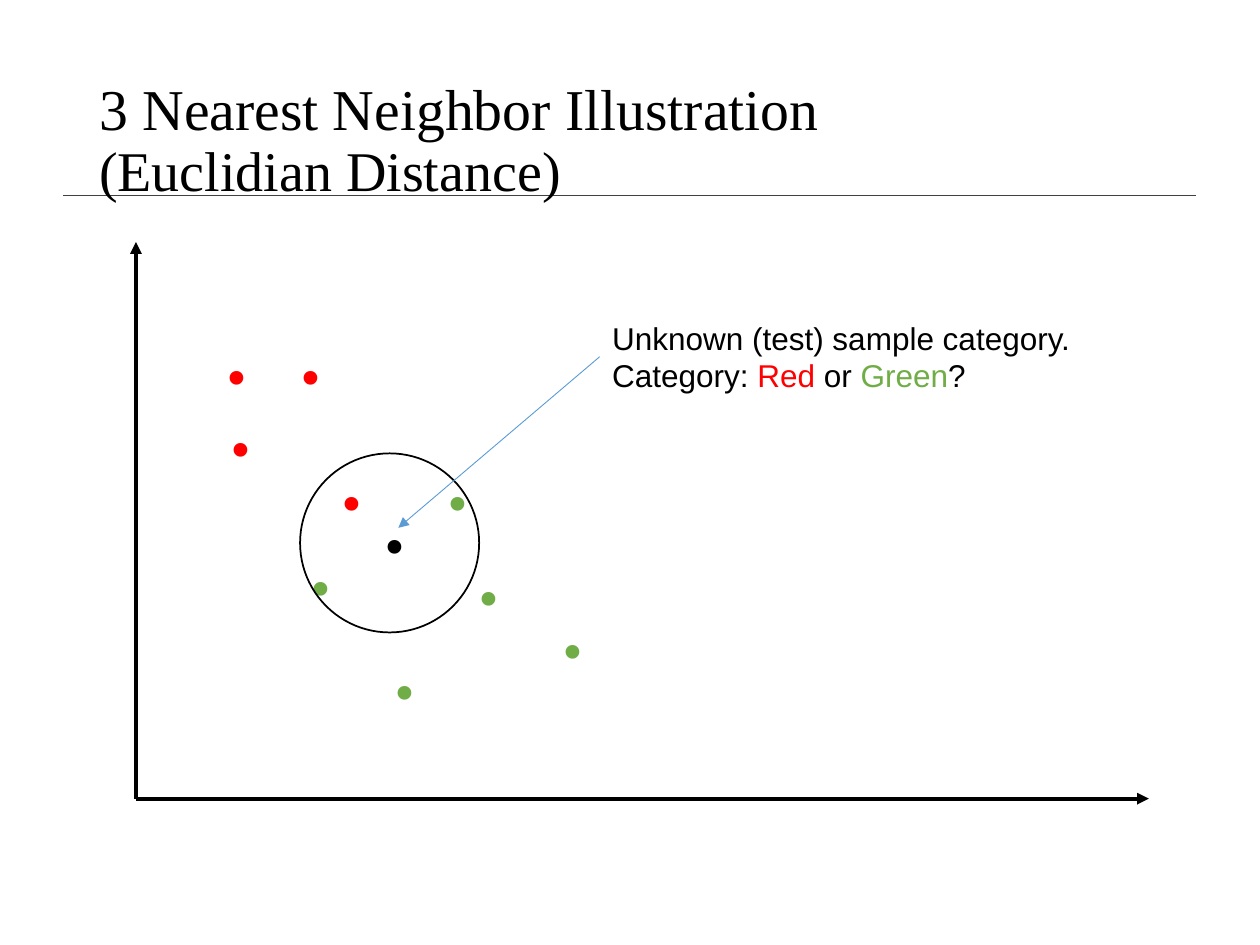
"""Build a slide that illustrates 3-nearest-neighbor classification."""
from typing import Any, NamedTuple

from lxml.etree import SubElement
from pptx import Presentation
from pptx.dml.color import RGBColor
from pptx.enum.shapes import MSO_CONNECTOR, MSO_SHAPE
from pptx.enum.text import MSO_ANCHOR, MSO_AUTO_SIZE
from pptx.oxml.ns import qn
from pptx.util import Cm, Pt

BLACK = RGBColor(0x00, 0x00, 0x00)
GRAY = RGBColor(0x40, 0x40, 0x40)
RED = RGBColor(0xFF, 0x00, 0x00)
GREEN = RGBColor(0x70, 0xAD, 0x47)
BLUE = RGBColor(0x5B, 0x9B, 0xD5)

SERIF, SANS = "Times New Roman", "Arial"
DOT_SIZE = (1.09, 3.05)
ORIGIN_X, ORIGIN_Y = 2.74, 16.1


class Line(NamedTuple):
    start: tuple[float, float]
    end: tuple[float, float]
    color: RGBColor
    width: float
    arrow: bool = True


class Dot(NamedTuple):
    left: float
    top: float
    color: RGBColor


class Span(NamedTuple):
    text: str
    size: float
    font: str = SANS
    color: RGBColor = BLACK


RULE = Line((1.27, 3.94), (24.1, 3.94), GRAY, 1, arrow=False)
AXES = [
    Line((ORIGIN_X, ORIGIN_Y), (ORIGIN_X, 4.88), BLACK, 2.25),
    Line((ORIGIN_X, ORIGIN_Y), (23.16, ORIGIN_Y), BLACK, 2.25),
]
POINTER = Line((12.09, 7.19), (8.03, 10.64), BLUE, 0.5)
DOTS = [
    Dot(4.32, 6.73, RED),
    Dot(4.24, 5.28, RED),
    Dot(6.55, 7.82, RED),
    Dot(5.72, 5.28, RED),
    Dot(5.92, 9.53, GREEN),
    Dot(9.32, 9.73, GREEN),
    Dot(7.62, 11.63, GREEN),
    Dot(11, 10.8, GREEN),
    Dot(8.69, 7.82, GREEN),
    Dot(7.42, 8.69, BLACK),
]
TITLE = [
    Span("3 Nearest Neighbor Illustration", 33, SERIF),
    Span("(Euclidian Distance)", 32, SERIF),
]
QUESTION = [
    [Span("Unknown (test) sample category.", 18)],
    [
        Span("Category: ", 18),
        Span("Red", 18, color=RED),
        Span(" or ", 18),
        Span("Green", 18, color=GREEN),
        Span("?", 18),
    ],
]


def set_attributes(target: Any, values: dict[str, Any]) -> None:
    """Set each named attribute of the target."""
    for name, value in values.items():
        setattr(target, name, value)


def add_line(shapes: Any, line: Line) -> None:
    """Draw a straight line, with an arrowhead at its end if asked."""
    points = [Cm(v) for v in (*line.start, *line.end)]
    c = shapes.add_connector(MSO_CONNECTOR.STRAIGHT, *points)
    c.line.color.rgb = line.color
    c.line.width = Pt(line.width)
    sp_pr = c._element.spPr
    if line.arrow:
        SubElement(sp_pr.find(qn("a:ln")), qn("a:tailEnd"), type="triangle")
    SubElement(sp_pr, qn("a:effectLst"))


def add_frame(shapes: Any, box: tuple[float, ...], **values: Any) -> Any:
    """Add a text box and return its formatted text frame."""
    tf = shapes.add_textbox(*(Cm(v) for v in box)).text_frame
    set_attributes(tf, {"word_wrap": True, **values})
    return tf


def add_span(p: Any, span: Span) -> None:
    """Append a formatted run to a paragraph."""
    r = p.add_run()
    r.text = span.text
    set_attributes(r.font, {"size": Pt(span.size), "name": span.font})
    r.font.color.rgb = span.color


def add_title(shapes: Any) -> None:
    """Write the two-line title."""
    tf = add_frame(shapes, (1.75, 1.02, 21.89, 3.68), vertical_anchor=MSO_ANCHOR.MIDDLE)
    p = tf.paragraphs[0]
    p.line_spacing = 0.9
    first, second = TITLE
    add_span(p, first)
    p.add_line_break()
    add_span(p, second)


def add_dot(shapes: Any, dot: Dot) -> None:
    """Draw a sample as a large period."""
    tf = add_frame(
        shapes,
        (dot.left, dot.top, *DOT_SIZE),
        word_wrap=False,
        auto_size=MSO_AUTO_SIZE.SHAPE_TO_FIT_TEXT,
    )
    add_span(tf.paragraphs[0], Span(".", 66, SERIF, dot.color))


def add_neighborhood(shapes: Any) -> None:
    """Draw the circle around the nearest neighbors."""
    sp = shapes.add_shape(MSO_SHAPE.OVAL, Cm(6.05), Cm(9.14), Cm(3.61), Cm(3.61))
    sp.shadow.inherit = False
    sp.fill.background()
    sp.line.color.rgb = BLACK
    sp.line.width = Pt(1)


def add_question(shapes: Any) -> None:
    """Write the question about the unknown sample."""
    tf = add_frame(
        shapes, (12.09, 6.3, 10.01, 1.8), auto_size=MSO_AUTO_SIZE.SHAPE_TO_FIT_TEXT
    )
    for i, spans in enumerate(QUESTION):
        p = tf.add_paragraph() if i else tf.paragraphs[0]
        for span in spans:
            add_span(p, span)


def main() -> None:
    """Build and save the slide."""
    prs = Presentation()
    set_attributes(prs, {"slide_width": Cm(25.4), "slide_height": Cm(19.05)})
    s = prs.slides.add_slide(prs.slide_layouts[6])
    add_line(s.shapes, RULE)
    add_title(s.shapes)
    axes = s.shapes.add_group_shape()
    for axis in AXES:
        add_line(axes.shapes, axis)
    for dot in DOTS:
        add_dot(s.shapes, dot)
    add_neighborhood(s.shapes)
    add_question(s.shapes)
    add_line(s.shapes, POINTER)
    prs.save("out.pptx")


if __name__ == "__main__":
    main()
